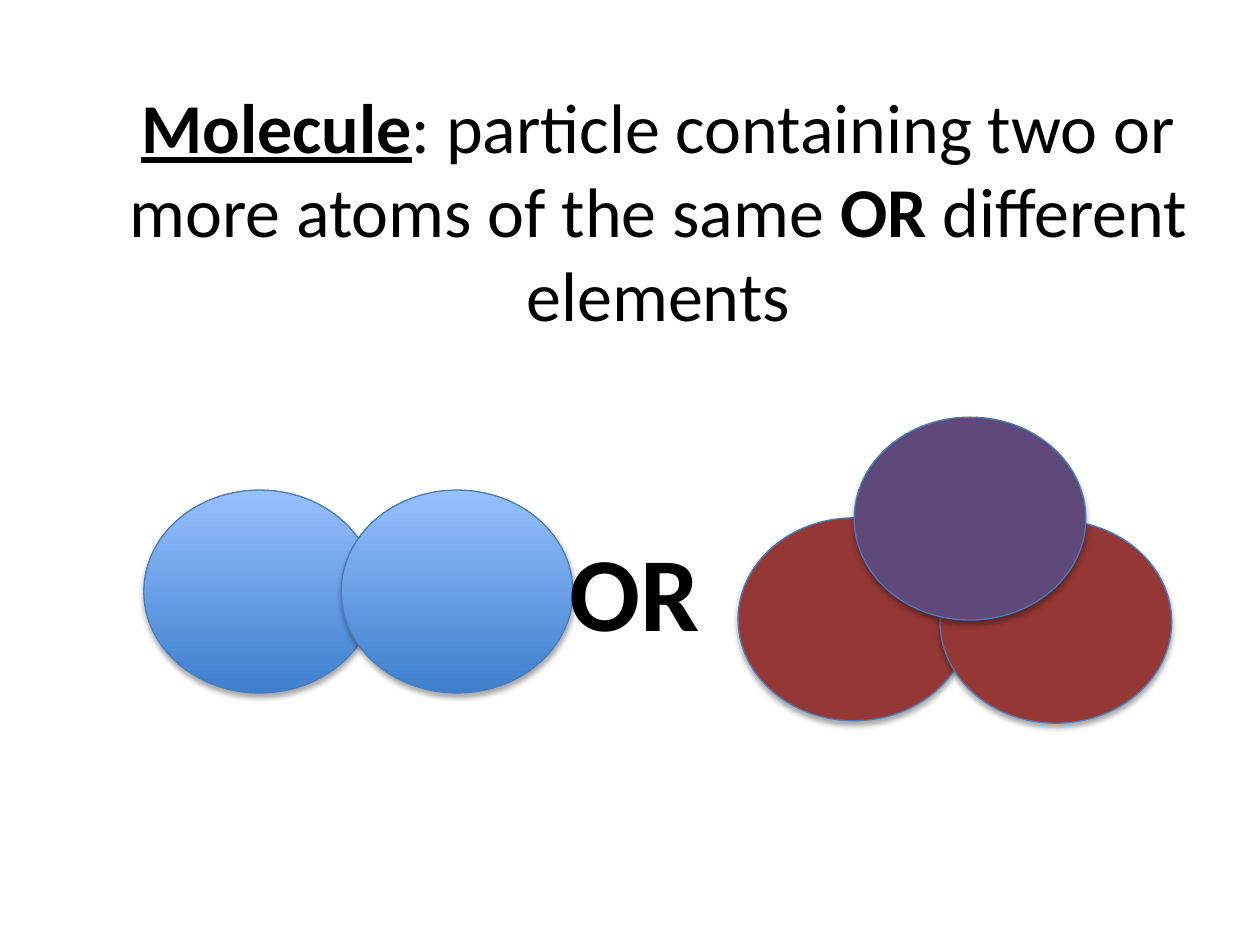
from lxml.etree import SubElement
from pptx import Presentation
from pptx.dml.color import RGBColor
from pptx.enum.shapes import MSO_SHAPE as Shape
from pptx.enum.text import PP_ALIGN as Align
from pptx.oxml.ns import qn
from pptx.util import Cm, Pt

ATOM_WIDTH, ATOM_HEIGHT = 4.67, 4.09
BLUE_GRADIENT = ("3E7FCD", "96C0FF")
RED, PURPLE, OUTLINE, BLACK = "953734", "5F497A", "4A7DBA", "000000"


def color(value):
    return RGBColor.from_string(value)


def add_shadow(shape):
    shape.shadow.inherit = False
    effects = shape._element.spPr.find(qn("a:effectLst"))
    shadow = SubElement(effects, qn("a:outerShdw"), blurRad="40000",
                        dist="23000", dir="5400000", rotWithShape="0")
    tint = SubElement(shadow, qn("a:srgbClr"), val=BLACK)
    SubElement(tint, qn("a:alpha"), val="35000")


def add_atom(shapes, left, top):
    atom = shapes.add_shape(Shape.OVAL, Cm(left), Cm(top),
                            Cm(ATOM_WIDTH), Cm(ATOM_HEIGHT))
    atom.line.color.rgb = color(OUTLINE)
    atom.line.width = Pt(0.75)
    add_shadow(atom)
    return atom


def add_solid_atom(shapes, left, top, fill):
    atom = add_atom(shapes, left, top)
    atom.fill.solid()
    atom.fill.fore_color.rgb = color(fill)


def add_gradient_atom(shapes, left, top):
    atom = add_atom(shapes, left, top)
    atom.fill.gradient()
    atom.fill.gradient_angle = 90
    for stop, shade in zip(atom.fill.gradient_stops, BLUE_GRADIENT):
        stop.color.rgb = color(shade)


def add_text(page, left, top, width, height, size, spans):
    box = page.shapes.add_textbox(Cm(left), Cm(top), Cm(width), Cm(height))
    box.text_frame.word_wrap = True
    para = box.text_frame.paragraphs[0]
    para.alignment = Align.CENTER
    para.font.name = "Calibri"
    para.font.size = Pt(size)
    para.font.color.rgb = color(BLACK)
    for text, bold, underline in spans:
        span = para.add_run()
        span.text = text
        span.font.bold = bold
        span.font.underline = underline


def main():
    deck = Presentation()
    deck.slide_width, deck.slide_height = Cm(25.4), Cm(19.05)
    page = deck.slides.add_slide(deck.slide_layouts[6])

    add_text(page, 1.75, 1.55, 23.04, 5.33, 40, [
        ("Molecule", True, True),
        (": particle containing two or more atoms of the same ", False, False),
        ("OR", True, False),
        (" different elements", False, False),
    ])

    same_element = page.shapes.add_group_shape()
    for left in (2.9, 6.88):
        add_gradient_atom(same_element.shapes, left, 9.88)

    for left, top, fill in ((14.88, 10.44, RED), (18.95, 10.49, RED),
                            (17.22, 8.41, PURPLE)):
        add_solid_atom(page.shapes, left, top, fill)

    add_text(page, 10.87, 10.49, 4.32, 2.82, 60, [("OR ", True, False)])
    deck.save("out.pptx")


if __name__ == "__main__":
    main()
